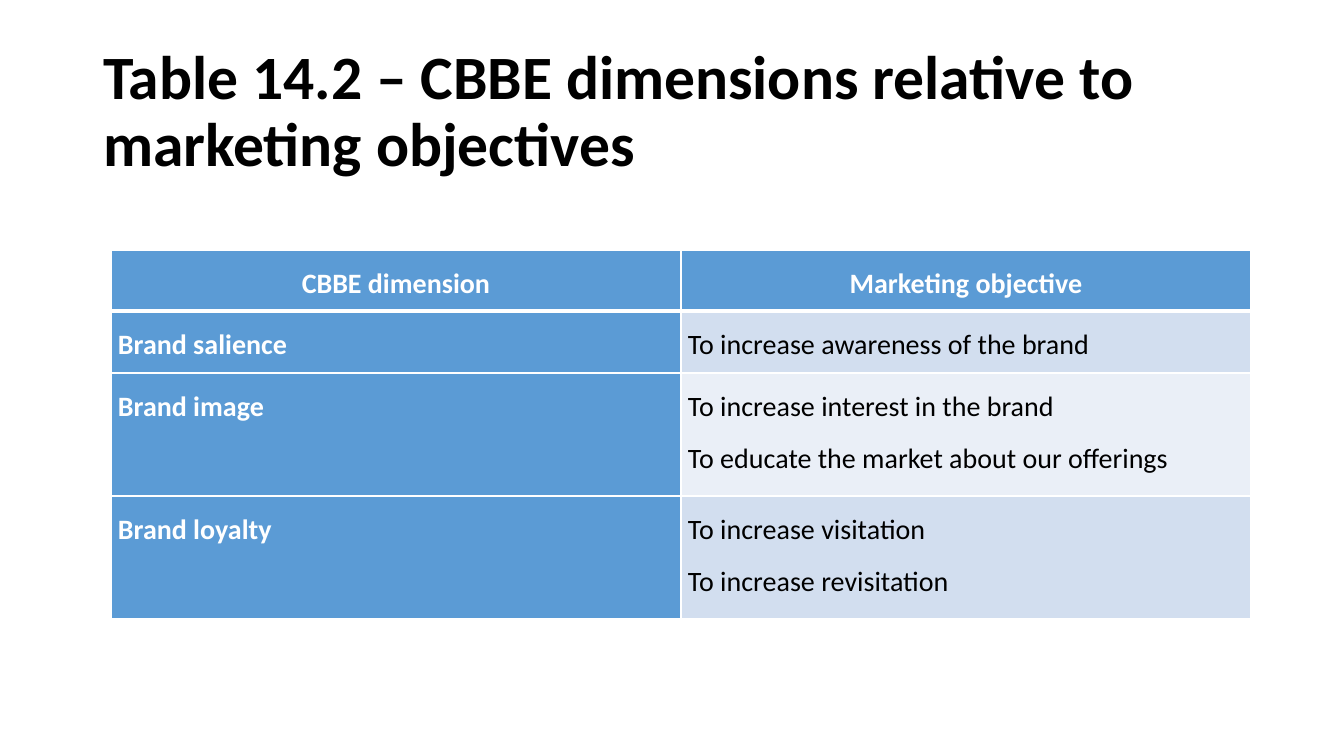
from dataclasses import dataclass

from pptx import Presentation
from pptx.dml.color import RGBColor as Rgb
from pptx.enum.text import MSO_ANCHOR as Anchor, MSO_AUTO_SIZE as Fit, PP_ALIGN as Align
from pptx.oxml import parse_xml
from pptx.oxml.ns import nsdecls
from pptx.slide import Slide
from pptx.table import _Cell as Cell
from pptx.text.text import TextFrame
from pptx.util import Emu, Pt

SCALE = 914400 / 100.8


@dataclass(frozen=True)
class Theme:
    font: str = "Calibri"
    black: str = "000000"
    white: str = "FFFFFF"
    blue: str = "5B9BD5"
    dark: str = "D2DEEF"
    light: str = "EAEFF7"
    title: int = 44
    body: int = 20
    thin: int = 1
    thick: int = 3


@dataclass(frozen=True)
class Row:
    name: str
    goals: tuple[str, ...]
    high: int


THEME = Theme()
ROWS = (
    Row("CBBE dimension", ("Marketing objective",), 61),
    Row("Brand salience", ("To increase awareness of the brand",), 62),
    Row("Brand image", ("To increase interest in the brand",
                        "To educate the market about our offerings"), 123),
    Row("Brand loyalty", ("To increase visitation", "To increase revisitation"), 123),
)


def px(count: int) -> Emu:
    return Emu(round(count * SCALE))


def write(frame: TextFrame, lines: tuple[str, ...], size: int, color: str,
          bold: bool, align: Align, space: float) -> None:
    frame.text = "\n".join(lines)
    for para in frame.paragraphs:
        para.alignment = align
        para.line_spacing = space
        font = para.font
        font.name = THEME.font
        font.size = Pt(size)
        font.bold = bold
        font.color.rgb = Rgb.from_string(color)


def edge(cell: Cell, top: int, base: int) -> None:
    props = cell._tc.get_or_add_tcPr()
    sides = {"lnL": THEME.thin, "lnR": THEME.thin, "lnT": top, "lnB": base}
    for spot, (tag, width) in enumerate(sides.items()):
        props.insert(spot, parse_xml(
            f'<a:{tag} {nsdecls("a")} w="{Pt(width)}"><a:solidFill>'
            f'<a:srgbClr val="{THEME.white}"/></a:solidFill></a:{tag}>'))


def add_title(slide: Slide, text: str) -> None:
    title = slide.shapes.title
    title.left, title.top, title.width, title.height = map(px, (93, 40, 1159, 146))
    frame = title.text_frame
    frame.word_wrap = True
    frame.auto_size = Fit.NONE
    frame.vertical_anchor = Anchor.MIDDLE
    write(frame, (text,), THEME.title, THEME.black, True, Align.LEFT, 0.9)


def add_grid(slide: Slide, rows: tuple[Row, ...]) -> None:
    high = sum(row.high for row in rows)
    grid = slide.shapes.add_table(len(rows), 2, px(111), px(250), px(1140), px(high)).table
    for col in grid.columns:
        col.width = px(570)
    for i, row in enumerate(rows):
        grid.rows[i].height = px(row.high)
        for j, lines in enumerate(((row.name,), row.goals)):
            cell = grid.cell(i, j)
            head = i == 0
            strong = head or j == 0
            band = THEME.dark if i % 2 else THEME.light
            cell.margin_left = cell.margin_right = px(7)
            cell.margin_top = cell.margin_bottom = px(0)
            cell.fill.solid()
            cell.fill.fore_color.rgb = Rgb.from_string(THEME.blue if strong else band)
            write(cell.text_frame, lines, THEME.body,
                  THEME.white if strong else THEME.black, strong,
                  Align.CENTER if head else Align.LEFT, 1.5)
            edge(cell, THEME.thick if i == 1 else THEME.thin,
                 THEME.thick if head else THEME.thin)


def main() -> None:
    deck = Presentation()
    deck.slide_width, deck.slide_height = px(1344), px(756)
    slide = deck.slides.add_slide(deck.slide_layouts.get_by_name("Title Only"))
    add_title(slide, "Table 14.2 – CBBE dimensions relative to marketing objectives")
    add_grid(slide, ROWS)
    deck.save("out.pptx")


if __name__ == "__main__":
    main()
